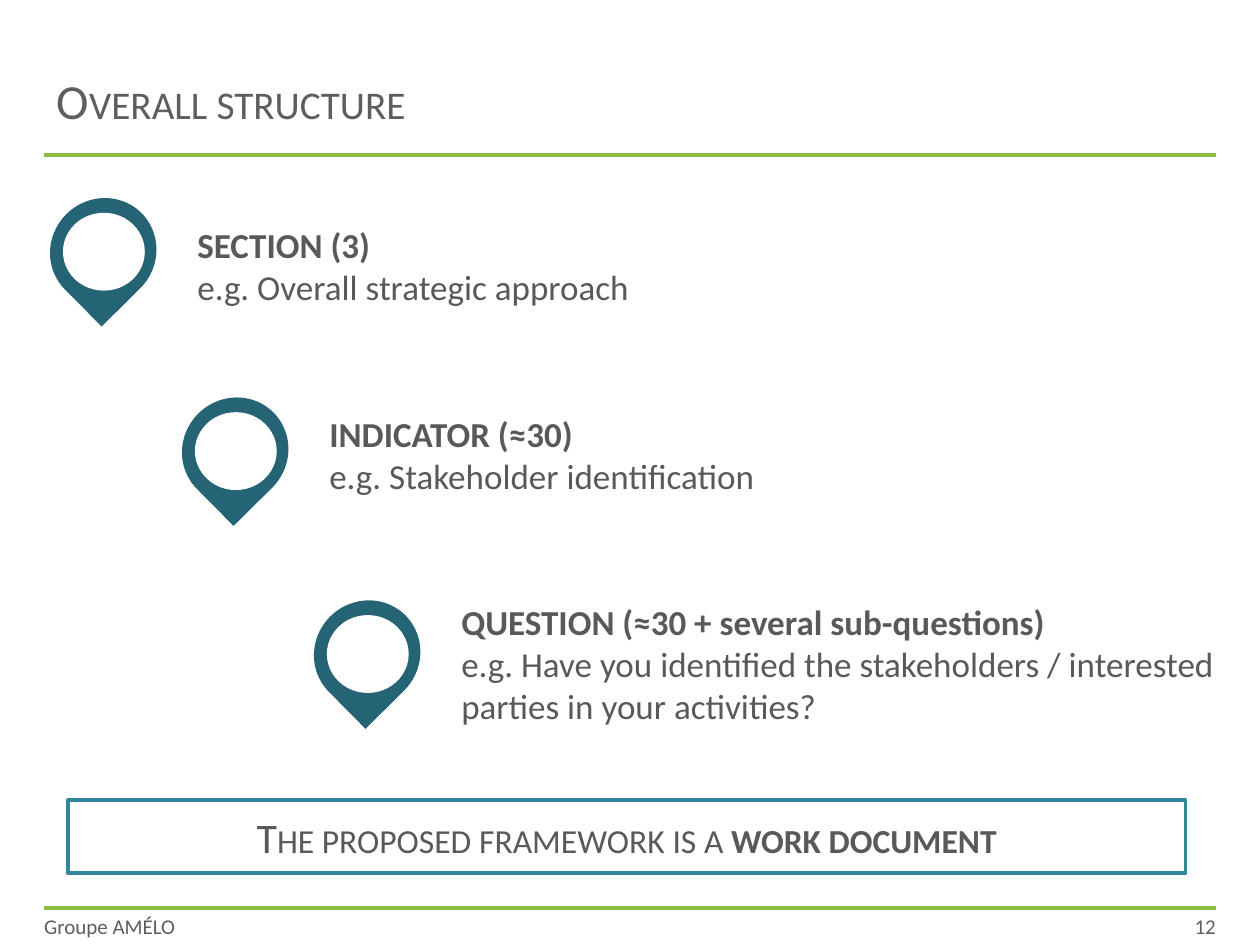
"""Build the "Overall structure" slide with its three-level cascade."""
from dataclasses import dataclass

from lxml.etree import SubElement
from pptx import Presentation
from pptx.dml.color import RGBColor
from pptx.enum.shapes import MSO_CONNECTOR, MSO_SHAPE as Shape
from pptx.enum.text import MSO_ANCHOR as Anchor, PP_ALIGN as Align
from pptx.oxml.ns import qn
from pptx.util import Cm, Pt


@dataclass(frozen=True)
class Theme:
    font: str = "Calibri"
    grey: str = "5C5E5F"
    text: str = "595959"
    white: str = "FFFFFF"
    green: str = "8EBC3F"
    pin: str = "256474"
    frame: str = "31869B"
    title_size: int = 28
    banner_size: int = 24
    level_size: int = 20
    footer_size: int = 12
    line_width: float = 2.25


@dataclass(frozen=True)
class Level:
    heading: str
    example: str
    pin_top: float
    width: float
    height: float


THEME = Theme()
LEVELS = [
    Level("SECTION (3)", "e.g. Overall strategic approach", 4.01, 12.78, 4.01),
    Level("INDICATOR (≈30)", "e.g. Stakeholder identification", 8.03, 16.31, 4.01),
    Level("QUESTION (≈30 + several sub-questions)",
          "e.g. Have you identified the stakeholders / interested parties in your activities?",
          12.12, 16.31, 5.0),
]
FIRST_LEFT, LEFT_STEP = 0.99, 2.66
FIRST_TOP, TOP_STEP = 3.53, 3.8
PANEL_OFFSET = 2.74
MARGIN, CONTENT_WIDTH = 0.89, 23.62


def box(left, top, width, height):
    return Cm(left), Cm(top), Cm(width), Cm(height)


def format_run(run, size, color, bold=False, small_caps=False):
    font = run.font
    font.name, font.size, font.bold = THEME.font, Pt(size), bold
    font.color.rgb = RGBColor.from_string(color)
    if small_caps:
        run._r.get_or_add_rPr().set("cap", "small")


def add_filled(shapes, kind, position, color, opacity=None):
    shape = shapes.add_shape(kind, *box(*position))
    shape.shadow.inherit = False
    shape.fill.solid()
    shape.fill.fore_color.rgb = RGBColor.from_string(color)
    shape.line.fill.background()
    if opacity is not None:
        color_element = shape._element.spPr.find(qn("a:solidFill"))[0]
        SubElement(color_element, qn("a:alpha")).set("val", str(opacity * 1000))
    return shape


def add_rule(slide, top):
    rule = slide.shapes.add_connector(
        MSO_CONNECTOR.STRAIGHT, Cm(MARGIN), Cm(top), Cm(MARGIN + CONTENT_WIDTH), Cm(top))
    rule.line.color.rgb = RGBColor.from_string(THEME.green)
    rule.line.width = Pt(THEME.line_width)
    SubElement(rule._element.spPr, qn("a:effectLst"))


def set_title(slide, text):
    title = slide.shapes.title
    title.left, title.top, title.width, title.height = box(MARGIN, 0.76, 23.6, 2.49)
    frame = title.text_frame
    frame.text = text
    frame.vertical_anchor = Anchor.MIDDLE
    paragraph = frame.paragraphs[0]
    paragraph.alignment = Align.LEFT
    format_run(paragraph.runs[0], THEME.title_size, THEME.grey, small_caps=True)


def add_footer(slide, text, left, width, alignment):
    frame = slide.shapes.add_textbox(*box(left, 18.31, width, 0.71)).text_frame
    frame.margin_left = frame.margin_right = frame.margin_top = frame.margin_bottom = 0
    frame.word_wrap = True
    frame.vertical_anchor = Anchor.MIDDLE
    frame.text = text
    paragraph = frame.paragraphs[0]
    paragraph.alignment = alignment
    format_run(paragraph.runs[0], THEME.footer_size, THEME.grey)


def add_panel(slide, level, left, top):
    panel = add_filled(slide.shapes, Shape.RECTANGLE,
                       (left, top, level.width, level.height), THEME.white, opacity=88)
    frame = panel.text_frame
    frame.word_wrap = True
    frame.vertical_anchor = Anchor.TOP
    frame.margin_top = Cm(0.98)
    frame.text = f"{level.heading}\n{level.example}"
    for paragraph, bold in zip(frame.paragraphs, (True, False)):
        paragraph.alignment = Align.LEFT
        format_run(paragraph.runs[0], THEME.level_size, THEME.text, bold)


def add_pin(slide, left, top):
    shapes = slide.shapes.add_group_shape().shapes
    drop = add_filled(shapes, Shape.TEAR, (left, top, 2.18, 2.11), THEME.pin)
    drop.rotation = 135.3
    add_filled(shapes, Shape.OVAL, (left + 0.28, top + 0.28, 1.65, 1.57), THEME.white)


def add_banner(slide, lead, emphasis):
    banner = add_filled(slide.shapes, Shape.RECTANGLE, (1.37, 16.13, 22.53, 1.47), THEME.white)
    banner.line.color.rgb = RGBColor.from_string(THEME.frame)
    banner.line.width = Pt(THEME.line_width)
    frame = banner.text_frame
    frame.word_wrap = True
    frame.vertical_anchor = Anchor.MIDDLE
    paragraph = frame.paragraphs[0]
    paragraph.alignment = Align.CENTER
    for text, bold in ((lead, False), (emphasis, True)):
        run = paragraph.add_run()
        run.text = text
        format_run(run, THEME.banner_size, THEME.text, bold, small_caps=True)


def main():
    presentation = Presentation()
    presentation.slide_width, presentation.slide_height = Cm(25.4), Cm(19.05)
    slide = presentation.slides.add_slide(presentation.slide_layouts[5])
    for top in (3.12, 18.31):
        add_rule(slide, top)
    add_footer(slide, "12", 20.31, 4.2, Align.RIGHT)
    add_footer(slide, "Groupe AMÉLO", MARGIN, 4.6, Align.LEFT)
    set_title(slide, "Overall structure")
    for index, level in enumerate(LEVELS):
        left = FIRST_LEFT + index * LEFT_STEP
        add_panel(slide, level, left + PANEL_OFFSET, FIRST_TOP + index * TOP_STEP)
        add_pin(slide, left, level.pin_top)
    add_banner(slide, "The proposed framework is a ", "work document")
    presentation.save("out.pptx")


if __name__ == "__main__":
    main()
